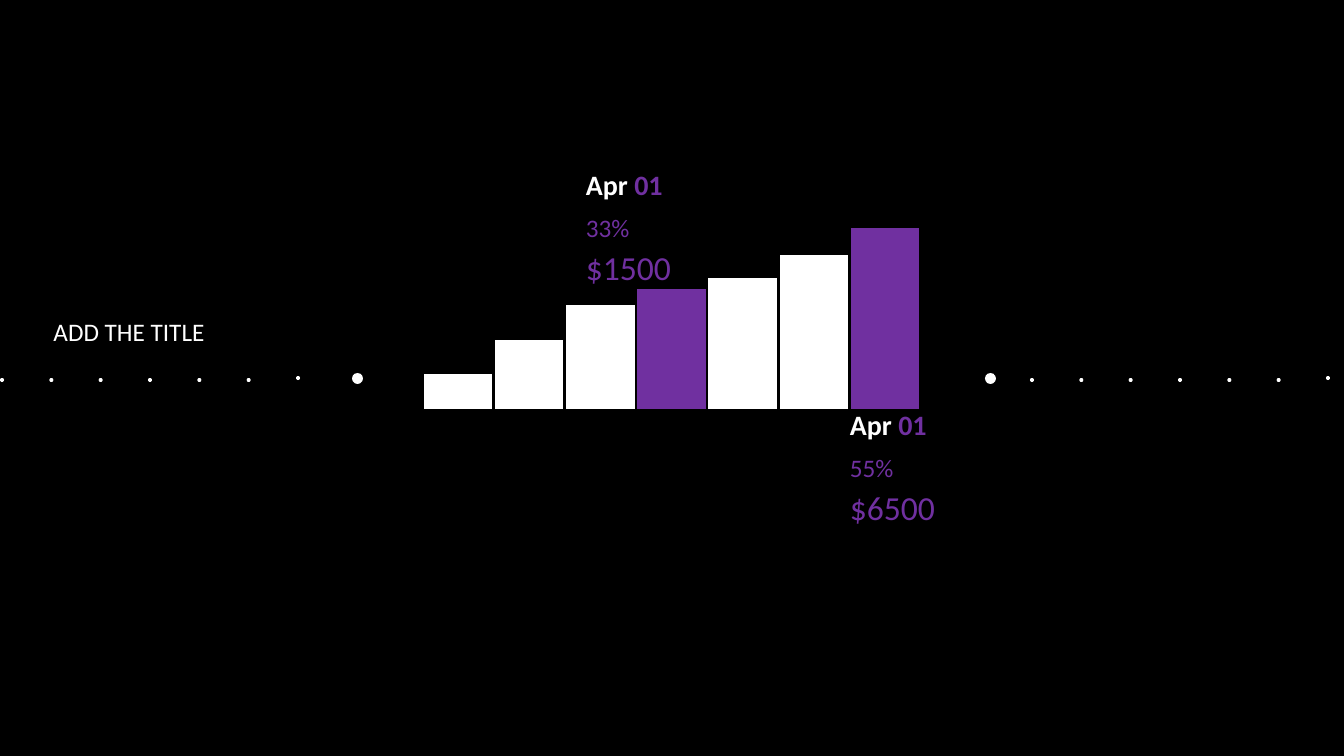
from lxml.etree import SubElement
from pptx import Presentation
from pptx.chart.data import CategoryChartData
from pptx.dml.color import RGBColor
from pptx.enum.chart import XL_CHART_TYPE
from pptx.enum.shapes import MSO_SHAPE
from pptx.enum.text import MSO_ANCHOR, MSO_AUTO_SIZE, PP_ALIGN
from pptx.oxml.ns import qn
from pptx.util import Pt

WIDE, HIGH = 1344, 756
FONT = "Calibri"
BLACK, WHITE, PURPLE = "000000", "FFFFFF", "7030A0"
SALES = [19, 38, 57, 66, 72, 85, 100]
MARKED = (3, 6)


def px(*sizes):
    """Turn pixel lengths into EMU."""
    return [round(size * 12192000 / WIDE) for size in sizes]


def paint(fill, color):
    fill.solid()
    fill.fore_color.rgb = RGBColor.from_string(color)


def add_run(para, text, size, color, bold=False):
    run = para.add_run()
    run.text = text
    font = run.font
    font.name, font.size, font.bold = FONT, Pt(size), bold
    font.color.rgb = RGBColor.from_string(color)


def add_line(slide, box, size, *parts, bold=False):
    """Add a text box of one line; each part is a text and its colour."""
    frame = slide.shapes.add_textbox(*px(*box)).text_frame
    frame.word_wrap = True
    for text, color in parts:
        add_run(frame.paragraphs[0], text, size, color, bold)


def add_title(slide, box):
    title = slide.shapes.title
    title.left, title.top, title.width, title.height = px(*box)
    frame = title.text_frame
    frame.word_wrap = True
    frame.auto_size = MSO_AUTO_SIZE.NONE
    frame.vertical_anchor = MSO_ANCHOR.MIDDLE
    frame.paragraphs[0].alignment = PP_ALIGN.CENTER
    add_run(frame.paragraphs[0], "ADD THE TITLE", 18, WHITE)


def add_dot(slide, x, y, size):
    dot = slide.shapes.add_shape(MSO_SHAPE.OVAL, *px(x, y, size, size))
    dot.shadow.inherit = False
    paint(dot.fill, WHITE)
    dot.line.fill.background()


def add_trail(slide, x, y, width, count=7):
    """Spread small dots evenly, the last one slightly raised."""
    for i in range(count):
        lift = 2 if i == count - 1 else 0
        add_dot(slide, x + width * i / (count - 1), y - lift, 4)


def add_bars(slide, box):
    data = CategoryChartData()
    data.categories = [str(i + 1) for i in range(len(SALES))]
    data.add_series("Series 1", SALES)
    chart = slide.shapes.add_chart(
        XL_CHART_TYPE.COLUMN_CLUSTERED, *px(*box), data).chart
    chart.has_title = chart.has_legend = False
    chart.font.name, chart.font.size = FONT, Pt(10)
    chart.font.color.rgb = RGBColor.from_string(BLACK)
    chart.category_axis.visible = False
    axis = chart.value_axis
    axis.visible = axis.has_major_gridlines = False
    axis.minimum_scale, axis.maximum_scale = 0, 100

    plot = chart.plots[0]
    plot.gap_width = 4
    plot.vary_by_categories = False
    series = plot.series[0]
    paint(series.format.fill, WHITE)
    for i in range(len(SALES)):
        color = PURPLE if i in MARKED else WHITE
        paint(series.points[i].format.fill, color)

    area = chart.plots[0]._element.getparent()
    layout = area.find(qn("c:layout"))
    if layout is None:
        layout = SubElement(area, qn("c:layout"))
        area.insert(0, layout)
    manual = SubElement(layout, qn("c:manualLayout"))
    for tag, val in (("layoutTarget", "inner"), ("xMode", "edge"),
                     ("yMode", "edge"), ("x", "0.02"), ("y", "0.13"),
                     ("w", "0.96"), ("h", "0.85")):
        SubElement(manual, qn("c:" + tag)).set("val", val)


def add_label(slide, x, y, share, price):
    """Stack date, share and price from the given corner."""
    add_line(slide, (x, y, 119, 44), 20,
             ("Apr ", WHITE), ("01", PURPLE), bold=True)
    add_line(slide, (x, y + 79, 119, 50), 24, (price, PURPLE))
    add_line(slide, (x, y + 44, 104, 40), 18, (share, PURPLE))


def main():
    deck = Presentation()
    deck.slide_width, deck.slide_height = px(WIDE, HIGH)
    slide = deck.slides.add_slide(deck.slide_layouts[5])
    paint(slide.background.fill, BLACK)
    for x in (0, 1030):
        add_trail(slide, x, 378, 296)
    add_bars(slide, (412, 200, 519, 213))
    add_label(slide, 576, 163, "33%", "$1500")
    add_label(slide, 840, 403, "55%", "$6500")
    for x in (352, 985):
        add_dot(slide, x, 373, 11)
    add_title(slide, (30, 311, 198, 40))
    deck.save("out.pptx")


if __name__ == "__main__":
    main()
